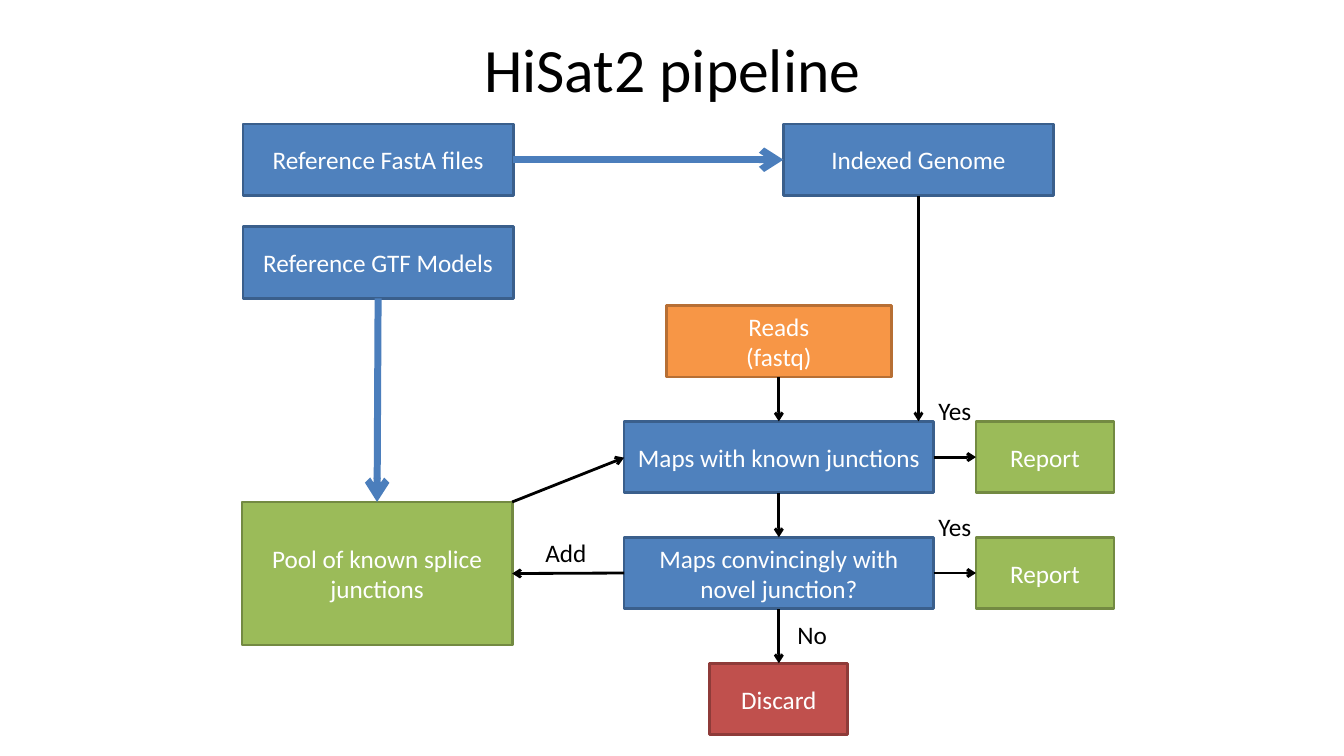
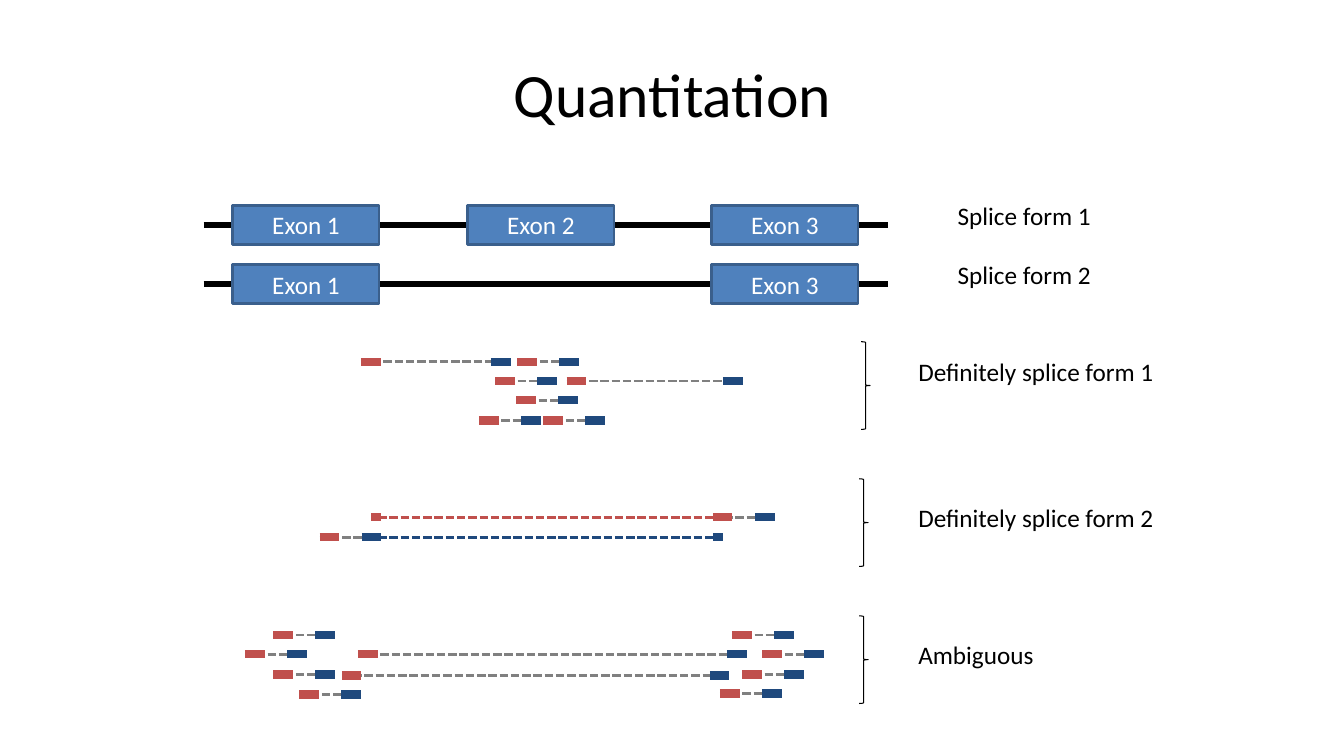
import lxml.etree
import pptx
import pptx.dml.color
import pptx.enum.dml
import pptx.enum.shapes
import pptx.enum.text
import pptx.oxml.ns
import pptx.util

BLACK, WHITE, GREY = "000000", "FFFFFF", "808080"
BLUE, BLUE_EDGE, ARROW_BLUE, NAVY = "4F81BD", "3A5F8C", "4B7EBC", "1F497D"
GREEN, GREEN_EDGE = "9BBB59", "738A42"
ORANGE, ORANGE_EDGE = "F79646", "B76F34"
RED, RED_EDGE = "C0504D", "8E3B39"
TOP, LEFT, BOTTOM, RIGHT = range(4)
ALIGN = pptx.enum.text.PP_ALIGN
ANCHOR = pptx.enum.text.MSO_ANCHOR
SHAPE = pptx.enum.shapes.MSO_SHAPE


def color(value):
    return pptx.dml.color.RGBColor.from_string(value)


def grid(cells):
    return pptx.util.Inches(cells / 10)


class Deck:
    font_name = "Calibri"
    body_size = 18
    title_size = 44

    def __init__(self):
        self.presentation = pptx.Presentation()
        self.presentation.slide_width = pptx.util.Inches(13.33)
        self.presentation.slide_height = pptx.util.Inches(7.5)
        self.slide = None

    def set_text(self, shape, text, size, text_color, align, anchor):
        frame = shape.text_frame
        frame.text = text
        frame.word_wrap = True
        frame.vertical_anchor = anchor
        for paragraph in frame.paragraphs:
            paragraph.alignment = align
            paragraph.font.name = self.font_name
            paragraph.font.size = pptx.util.Pt(size)
            paragraph.font.color.rgb = color(text_color)

    def add_slide(self, title, left, top, width, height):
        self.slide = self.presentation.slides.add_slide(self.presentation.slide_layouts[5])
        shape = self.slide.shapes.title
        shape.left, shape.top = grid(left), grid(top)
        shape.width, shape.height = grid(width), grid(height)
        self.set_text(shape, title, self.title_size, BLACK, ALIGN.CENTER, ANCHOR.MIDDLE)

    def box(self, text, left, top, width, height=7.1, fill=BLUE, edge=BLUE_EDGE):
        shape = self.slide.shapes.add_shape(
            SHAPE.RECTANGLE, grid(left), grid(top), grid(width), grid(height))
        shape.shadow.inherit = False
        shape.fill.solid()
        shape.fill.fore_color.rgb = color(fill)
        shape.line.color.rgb = color(edge)
        shape.line.width = pptx.util.Pt(2)
        self.set_text(shape, text, self.body_size, WHITE, ALIGN.CENTER, ANCHOR.MIDDLE)
        return shape

    def label(self, text, left, top, width, height=4):
        shape = self.slide.shapes.add_textbox(grid(left), grid(top), grid(width), grid(height))
        self.set_text(shape, text, self.body_size, BLACK, ALIGN.LEFT, ANCHOR.TOP)

    def brace(self, left, top):
        shape = self.slide.shapes.add_shape(
            SHAPE.RIGHT_BRACE, grid(left), grid(top), grid(0.9), grid(8.7))
        shape.shadow.inherit = False
        shape.fill.background()
        shape.line.color.rgb = color(BLACK)
        shape.line.width = pptx.util.Pt(0.75)

    def line(self, start, end, line_color=BLACK, width=2, dashed=False):
        connector = self.slide.shapes.add_connector(
            pptx.enum.shapes.MSO_CONNECTOR.STRAIGHT, *map(grid, (*start, *end)))
        connector.line.color.rgb = color(line_color)
        connector.line.width = pptx.util.Pt(width)
        if dashed:
            connector.line.dash_style = pptx.enum.dml.MSO_LINE.SQUARE_DOT
        lxml.etree.SubElement(connector._element.spPr, pptx.oxml.ns.qn("a:effectLst"))
        return connector

    def arrow(self, start, end, **style):
        connector = self.line(start, end, **style)
        outline = connector._element.spPr.find(pptx.oxml.ns.qn("a:ln"))
        lxml.etree.SubElement(outline, pptx.oxml.ns.qn("a:tailEnd"), type="arrow")
        return connector

    def link(self, source, source_side, target, target_side, **style):
        connector = self.arrow((0, 0), (0, 0), **style)
        connector.begin_connect(source, source_side)
        connector.end_connect(target, target_side)

    def bar(self, left, row, bar_color, length=1.95):
        self.line((left, row), (left + length, row), bar_color, 6)

    def read_pair(self, left, row, mate_left=None):
        mate_left = mate_left or left + 4.17
        self.line((left, row), (mate_left + 1, row), GREY, dashed=True)
        self.bar(left, row, RED)
        self.bar(mate_left, row, NAVY)


def build_pipeline(deck):
    deck.add_slide("HiSat2 pipeline", 21.7, 0.5, 90, 12.5)
    green = {"fill": GREEN, "edge": GREEN_EDGE}
    fasta = deck.box("Reference FastA files", 24.1, 12.3, 26.8)
    genome = deck.box("Indexed Genome", 77.7, 12.3, 26.8)
    models = deck.box("Reference GTF Models", 24.1, 22.5, 26.8)
    pool = deck.box("Pool of known splice junctions", 24, 49.8, 26.8, 14.2, **green)
    reads = deck.box("Reads\n(fastq)", 66.1, 30.3, 22.3, fill=ORANGE, edge=ORANGE_EDGE)
    known = deck.box("Maps with known junctions", 61.9, 41.8, 30.7)
    novel = deck.box("Maps convincingly with novel junction?", 61.9, 53.3, 30.7)
    discard = deck.box("Discard", 70.4, 65.8, 13.7, fill=RED, edge=RED_EDGE)

    for source, source_side, target, target_side in (
            (fasta, RIGHT, genome, LEFT), (models, BOTTOM, pool, TOP)):
        deck.link(source, source_side, target, target_side, line_color=ARROW_BLUE, width=5)
    for source, target in ((reads, known), (known, novel), (novel, discard)):
        deck.link(source, BOTTOM, target, TOP)
    for step, top in ((known, 41.8), (novel, 53.3)):
        report = deck.box("Report", 96.8, top, 13.7, **green)
        deck.link(step, RIGHT, report, LEFT)
        deck.label("Yes", 92.1, top - 3.1, 8)
    deck.link(novel, LEFT, pool, RIGHT)
    deck.arrow((50.8, 49.8), (61.9, 45.4))
    deck.arrow((91.1, 19.4), (91.1, 41.8))
    deck.label("Add", 53.1, 52.8, 8)
    deck.label("No", 78.1, 60.9, 8)


def build_quantitation(deck):
    deck.add_slide("Quantitation", 6.7, 3, 120, 12.5)
    exon_lefts = {1: 23.1, 2: 46.4, 3: 70.6}
    for form, (row, exons) in enumerate(((22.3, (1, 2, 3)), (28.2, (1, 3))), 1):
        deck.line((20.2, row), (88.1, row), width=4)
        for exon in exons:
            deck.box(f"Exon {exon}", exon_lefts[exon], row - 1.95, 14.5, 3.9)
        deck.label(f"Splice form {form}", 94, row - 2.95, 18.9)

    read_pairs = (
        (35.8, 35.9, 48.7), (51.3, 35.9),
        (49.1, 37.8), (56.2, 37.8, 71.7),
        (51.2, 39.7),
        (47.5, 41.7), (53.9, 41.7),
        (70.7, 51.3), (31.7, 53.3),
        (27.1, 63), (72.6, 63),
        (24.3, 64.9), (35.5, 64.9, 72.1), (75.6, 64.9),
        (27.1, 66.9), (33.9, 67, 70.4), (73.6, 66.9),
        (29.7, 68.9), (71.4, 68.8),
    )
    for read_pair in read_pairs:
        deck.read_pair(*read_pair)
    for row, split_color, end_left in ((51.3, RED, 36.8), (53.3, NAVY, 70.7)):
        deck.line((37.5, row), (71, row), split_color, dashed=True)
        deck.bar(end_left, row, split_color, 1)

    for text, brace_left, brace_top, label_top in (
            ("Definitely splice form 1", 85.4, 33.9, 34.9),
            ("Definitely splice form 2", 85.2, 47.5, 49.3),
            ("Ambiguous", 85.2, 61.1, 62.9)):
        deck.brace(brace_left, brace_top)
        deck.label(text, 90.1, label_top, 31.6)


def main():
    deck = Deck()
    build_pipeline(deck)
    build_quantitation(deck)
    deck.presentation.save("out.pptx")


if __name__ == "__main__":
    main()
